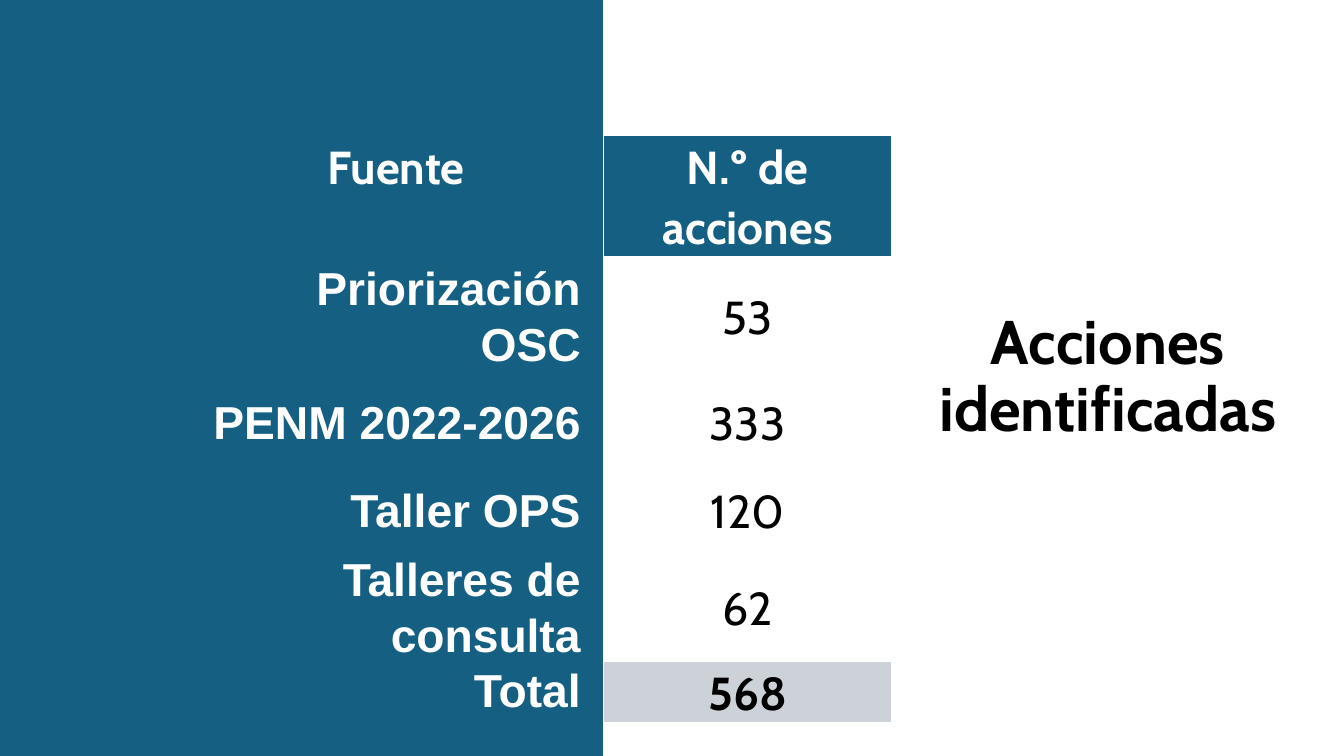
from pptx import Presentation
from pptx.dml.color import RGBColor
from pptx.enum.shapes import MSO_SHAPE
from pptx.enum.text import MSO_ANCHOR, PP_ALIGN
from pptx.oxml.ns import qn
from pptx.util import Inches, Pt

WIDTH, HEIGHT = 13.33, 7.5
BLUE, GREY, WHITE, BLACK = "156082", "CCD2D8", "FFFFFF", "000000"
NO_GRID_STYLE = "{2D5ABB26-0587-4C30-8999-92F81FD0307C}"
COLUMNS = [4.09, 2.85]
ROWS = [1.19, 1.18, 0.93, 0.82, 0.87, 0.6]
ACTIONS = [
    ("Fuente", "N.º de acciones"),
    ("Priorización OSC", "53"),
    ("PENM 2022-2026", "333"),
    ("Taller OPS", "120"),
    ("Talleres de consulta", "62"),
    ("Total", "568"),
]


def paint(color_format, color):
    """Set a colour from a hex string."""
    color_format.rgb = RGBColor.from_string(color)


def fill_with(fill, color):
    """Make a fill solid, or clear it when there is no colour."""
    if color:
        fill.solid()
        paint(fill.fore_color, color)
    else:
        fill.background()


def write(frame, text, size=33, font="Cabin", color=BLACK, bold=True,
          align=PP_ALIGN.CENTER, line=1.07, after=8):
    """Write one formatted paragraph into a text frame."""
    frame.word_wrap = True
    paragraph = frame.paragraphs[0]
    paragraph.alignment = align
    paragraph.line_spacing = line
    paragraph.space_before = Pt(0)
    paragraph.space_after = Pt(after)
    run = paragraph.add_run()
    run.text = text
    run.font.size = Pt(size)
    run.font.name = font
    run.font.bold = bold
    paint(run.font.color, color)


def place(shape, left, top, width, height):
    """Move and size a shape in inches."""
    shape.left, shape.top = Inches(left), Inches(top)
    shape.width, shape.height = Inches(width), Inches(height)


def add_panel(slide, width):
    """Add the full-height blue panel at the left edge."""
    panel = slide.shapes.add_shape(
        MSO_SHAPE.RECTANGLE, 0, 0, Inches(width), Inches(HEIGHT))
    panel.shadow.inherit = False
    fill_with(panel.fill, BLUE)
    panel.line.fill.background()


def add_title(slide, text):
    """Format the title placeholder at the right of the table."""
    title = slide.shapes.title
    place(title, 8.68, 0.7, 4.62, 6.1)
    title.text_frame.vertical_anchor = MSO_ANCHOR.MIDDLE
    write(title.text_frame, text, size=44, line=0.9, after=0)


def format_cell(cell, text, row, column):
    """Fill one cell according to its row and column."""
    is_header, is_total = row == 0, row == len(ACTIONS) - 1
    is_source = column == 0
    cell.margin_left, cell.margin_right = Inches(0.2 if is_source else 0.23), Inches(0.23)
    cell.margin_top = cell.margin_bottom = 0
    cell.vertical_anchor = MSO_ANCHOR.TOP if is_header or is_total else MSO_ANCHOR.MIDDLE
    background = BLUE if is_header else GREY if is_total else None
    fill_with(cell.fill, None if is_source else background)
    write(cell.text_frame, text,
          font="Arial" if is_source and not is_header else "Cabin",
          color=WHITE if is_source or is_header else BLACK,
          bold=is_source or is_header or is_total,
          align=PP_ALIGN.RIGHT if is_source and not is_header else PP_ALIGN.CENTER)


def add_actions_table(slide, left, top):
    """Add the table of actions by source."""
    frame = slide.shapes.add_table(
        len(ROWS), len(COLUMNS), Inches(left), Inches(top),
        Inches(sum(COLUMNS)), Inches(sum(ROWS)))
    table = frame.table
    table.first_row = table.horz_banding = False
    for style in frame.element.iter(qn("a:tableStyleId")):
        style.text = NO_GRID_STYLE
    for column, width in zip(table.columns, COLUMNS):
        column.width = Inches(width)
    for row, (height, texts) in enumerate(zip(ROWS, ACTIONS)):
        table.rows[row].height = Inches(height)
        for column, text in enumerate(texts):
            format_cell(table.cell(row, column), text, row, column)


def main():
    """Build and save the slide."""
    presentation = Presentation()
    presentation.slide_width = Inches(WIDTH)
    presentation.slide_height = Inches(HEIGHT)
    slide = presentation.slides.add_slide(presentation.slide_layouts[5])
    add_panel(slide, 5.98)
    add_title(slide, "Acciones identificadas")
    add_actions_table(slide, 1.9, 1.35)
    presentation.save("out.pptx")


if __name__ == "__main__":
    main()
